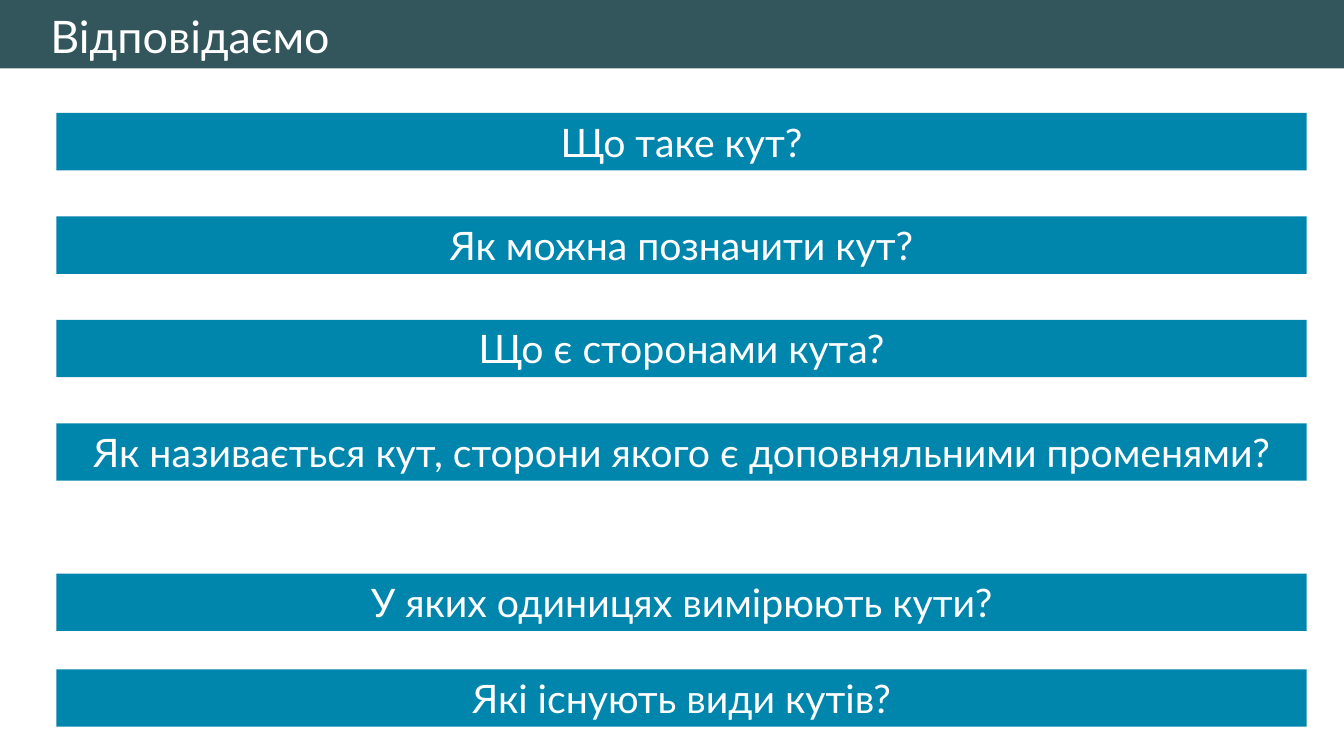
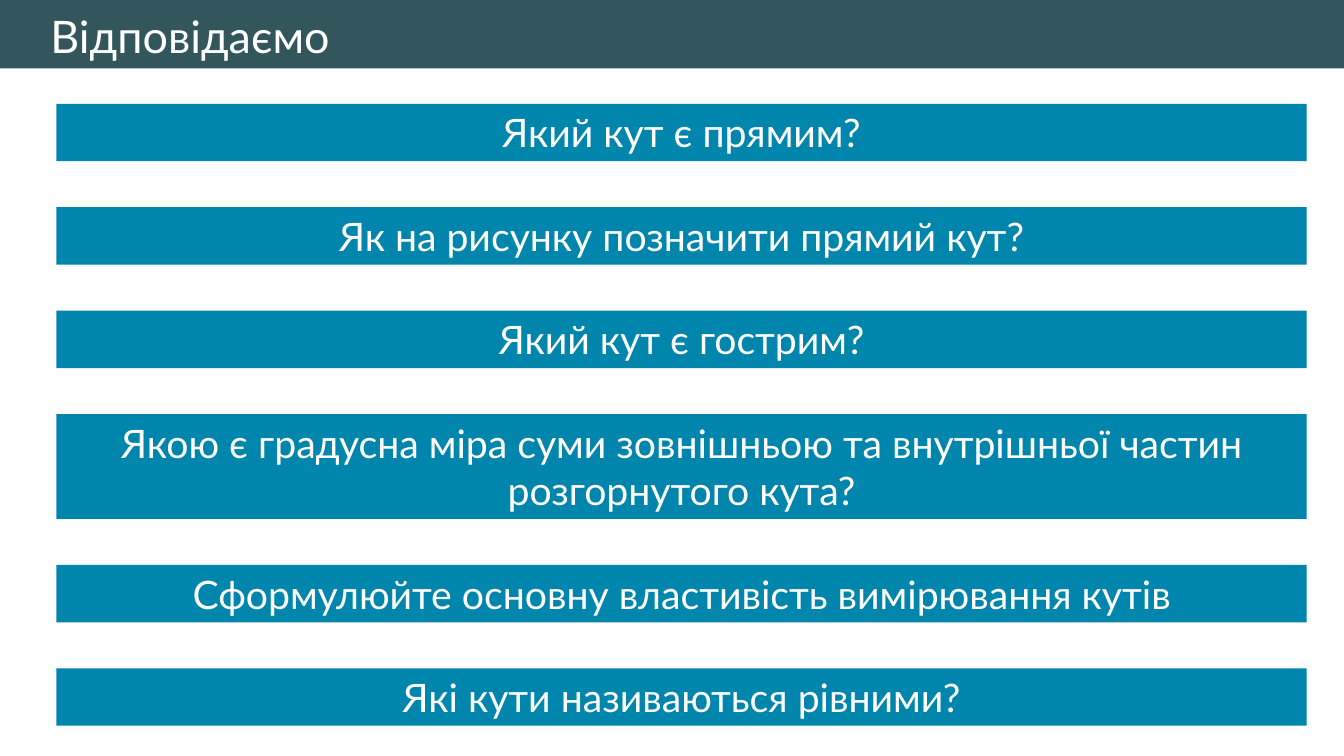
from pptx import Presentation
from pptx.dml.color import RGBColor
from pptx.enum.shapes import MSO_SHAPE as Shape
from pptx.enum.text import MSO_ANCHOR as Anchor, MSO_AUTO_SIZE as AutoSize, PP_ALIGN as Align
from pptx.util import Inches, Pt

# Shared style
COLORS = {"header": "33565D", "question": "0085AD", "text": "FFFFFF"}
FONT = "Lato"
WIDTH, HEIGHT = 13.33, 7.5
TITLE_LAYOUT = 5
HEADER_BOX = (0, 0, WIDTH, 0.68)
QUESTION_LEFT, QUESTION_WIDTH = 0.56, 12.4
ROW_HEIGHTS = {1: 0.57, 2: 1.04}  # by number of text lines

# Each group of questions: top, bottom, [(text, lines)]
SLIDES = [
    ("Відповідаємо", [
        (1.12, 4.77, [
            ("Що таке кут?", 1),
            ("Як можна позначити кут?", 1),
            ("Що є сторонами кута?", 1),
            ("Як називається кут, сторони якого є доповняльними променями?", 1),
        ]),
        (5.69, 7.21, [
            ("У яких одиницях вимірюють кути?", 1),
            ("Які існують види кутів?", 1),
        ]),
    ]),
    ("Відповідаємо", [
        (1.03, 7.2, [
            ("Який кут є прямим?", 1),
            ("Як на рисунку позначити прямий кут?", 1),
            ("Який кут є гострим?", 1),
            ("Якою є градусна міра суми зовнішньою та внутрішньої частин розгорнутого кута?", 2),
            ("Сформулюйте основну властивість вимірювання кутів", 1),
            ("Які кути називаються рівними?", 1),
        ]),
    ]),
]


def add_bar(slide, box, color):
    bar = slide.shapes.add_shape(Shape.RECTANGLE, *map(Inches, box))
    bar.shadow.inherit = False
    bar.fill.solid()
    bar.fill.fore_color.rgb = RGBColor.from_string(COLORS[color])
    bar.line.fill.background()
    return bar


def write_text(shape, text, size, alignment, anchor):
    frame = shape.text_frame
    frame.text = text
    frame.word_wrap = True
    frame.auto_size = AutoSize.SHAPE_TO_FIT_TEXT
    frame.vertical_anchor = anchor
    paragraph = frame.paragraphs[0]
    paragraph.alignment = alignment
    paragraph.font.name = FONT
    paragraph.font.size = Pt(size)
    paragraph.font.color.rgb = RGBColor.from_string(COLORS["text"])


def add_header(slide, text, box):
    """Dark band with the slide title in front of it."""
    left, top, width, height = box
    title = slide.shapes.title
    band = add_bar(slide, box, "header")
    title.element.addprevious(band.element)
    title.left, title.top = Inches(left + 0.4), Inches(top + 0.04)
    title.width, title.height = Inches(width - 0.95), Inches(height - 0.04)
    write_text(title, text, 32, Align.LEFT, Anchor.TOP)


def add_questions(slide, questions, box):
    """Question bars spread over the box with equal gaps."""
    left, top, width, height = box
    heights = [ROW_HEIGHTS[lines] for _, lines in questions]
    gap = (height - sum(heights)) / (len(questions) - 1)
    for (text, _), row_height in zip(questions, heights):
        bar = add_bar(slide, (left, top, width, row_height), "question")
        write_text(bar, text, 28, Align.CENTER, Anchor.TOP)
        top += row_height + gap


def add_question_slide(presentation, title, groups):
    slide = presentation.slides.add_slide(presentation.slide_layouts[TITLE_LAYOUT])
    add_header(slide, title, HEADER_BOX)
    for top, bottom, questions in groups:
        add_questions(slide, questions, (QUESTION_LEFT, top, QUESTION_WIDTH, bottom - top))


def main():
    presentation = Presentation()
    presentation.slide_width = Inches(WIDTH)
    presentation.slide_height = Inches(HEIGHT)
    for title, groups in SLIDES:
        add_question_slide(presentation, title, groups)
    presentation.save("out.pptx")


if __name__ == "__main__":
    main()
